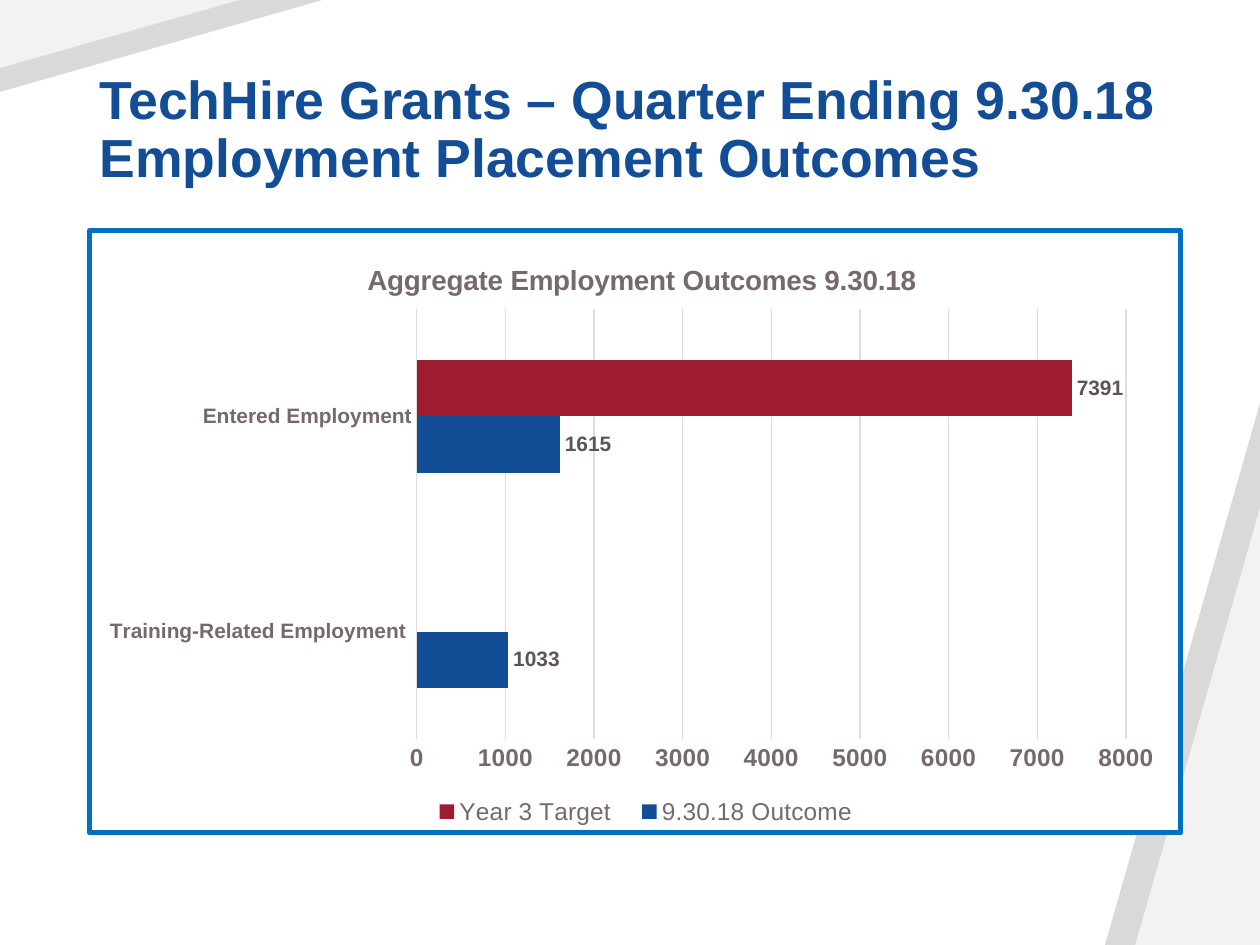
from lxml.etree import fromstring
from pptx import Presentation
from pptx.chart.data import CategoryChartData
from pptx.dml.color import RGBColor
from pptx.enum.chart import XL_CHART_TYPE, XL_LABEL_POSITION, XL_LEGEND_POSITION, XL_TICK_MARK
from pptx.enum.text import MSO_ANCHOR, MSO_AUTO_SIZE, PP_ALIGN
from pptx.oxml.ns import nsdecls, qn
from pptx.util import Inches, Pt

WIDTH, HEIGHT = 10, 7.5
FONT = "Arial"
COLORS = {
    "blue": "124D95", "red": "9E1C30", "border": "0070C0", "white": "FFFFFF",
    "label": "5E5457", "axis": "76696C", "grid": "E0DCDD",
    "band": "D9D9D9", "corner": "F2F2F2",
}
TITLE = "TechHire Grants – Quarter Ending 9.30.18\vEmployment Placement Outcomes"
CHART_TITLE = "Aggregate Employment Outcomes 9.30.18"
CATEGORIES = ["Training-Related Employment ", "Entered Employment"]
SERIES = [
    ("9.30.18 Outcome", [1033, 1615], "blue"),
    ("Year 3 Target", [None, 7391], "red"),
]
CORNERS = [
    ((WIDTH, HEIGHT), -1.23, -4.3, "band"),
    ((WIDTH, HEIGHT), -0.99, -3.47, "corner"),
    ((0, 0), 2.56, 0.73, "band"),
    ((0, 0), 1.9, 0.54, "corner"),
]
LEFT, CONTENT_WIDTH = 0.69, 8.7
TITLE_BOX = (LEFT, 0.4, CONTENT_WIDTH, 1.15)
CHART_BOX = (LEFT, 1.81, CONTENT_WIDTH, 4.82)
PLOT_SHARE = {"x": 0.3, "y": 0.13, "w": 0.65, "h": 0.715}
TITLE_SHARE = {"x": 0.25, "y": 0.045}
LEGEND_SHARE = {"x": 0.3, "y": 0.935, "w": 0.42, "h": 0.06}
FORMATS = {
    "title": {"size": Pt(30.6), "bold": True, "color": "blue"},
    "chart title": {"size": Pt(16), "bold": True, "color": "axis"},
    "category": {"size": Pt(12), "bold": True, "color": "axis"},
    "value": {"size": Pt(14), "bold": True, "color": "axis"},
    "legend": {"size": Pt(14), "bold": False, "color": "axis"},
    "label": {"size": Pt(12), "bold": True, "color": "label"},
}


def rgb(name):
    return RGBColor.from_string(COLORS[name])


def style(font, kind):
    font.name = FONT
    for key, value in FORMATS[kind].items():
        if key == "color":
            font.color.rgb = rgb(value)
        else:
            setattr(font, key, value)


def draw_line(line, color, width):
    line.color.rgb = rgb(color)
    line.width = Pt(width)


def set_layout(element, index, shares, inner=False):
    for old in element.findall(qn("c:layout")):
        element.remove(old)
    target = '<c:layoutTarget val="inner"/>' if inner else ""
    modes = "".join(f'<c:{key}Mode val="edge"/>' for key in "xy")
    values = "".join(f'<c:{key} val="{share}"/>' for key, share in shares.items())
    element.insert(index, fromstring(
        f'<c:layout {nsdecls("c")}><c:manualLayout>{target}{modes}{values}'
        '</c:manualLayout></c:layout>'))


def add_corner(page, corner, across, down, color):
    x, y = corner
    builder = page.shapes.build_freeform(Inches(x), Inches(y))
    builder.add_line_segments(
        [(Inches(x + across), Inches(y)), (Inches(x), Inches(y + down))])
    shape = builder.convert_to_shape()
    shape.shadow.inherit = False
    shape.fill.solid()
    shape.fill.fore_color.rgb = rgb(color)
    shape.line.fill.background()


def add_title(page):
    title = page.shapes.title
    title.left, title.top, title.width, title.height = map(Inches, TITLE_BOX)
    frame = title.text_frame
    frame.text = TITLE
    frame.word_wrap = True
    frame.auto_size = MSO_AUTO_SIZE.NONE
    frame.vertical_anchor = MSO_ANCHOR.BOTTOM
    para = frame.paragraphs[0]
    para.alignment = PP_ALIGN.LEFT
    para.line_spacing = 0.9
    for span in para.runs:
        style(span.font, "title")


def add_outcomes(page):
    data = CategoryChartData()
    data.categories = CATEGORIES
    for name, values, _ in SERIES:
        data.add_series(name, values)
    chart = page.shapes.add_chart(
        XL_CHART_TYPE.BAR_CLUSTERED, *map(Inches, CHART_BOX), data).chart
    chart.font.name = FONT
    chart.font.size = Pt(10)

    heading = chart.chart_title.text_frame
    heading.text = CHART_TITLE
    style(heading.paragraphs[0].runs[0].font, "chart title")
    chart.has_legend = True
    chart.legend.position = XL_LEGEND_POSITION.BOTTOM
    chart.legend.include_in_layout = False
    style(chart.legend.font, "legend")

    for axis, kind in ((chart.category_axis, "category"), (chart.value_axis, "value")):
        axis.major_tick_mark = axis.minor_tick_mark = XL_TICK_MARK.NONE
        style(axis.tick_labels.font, kind)
    draw_line(chart.category_axis.format.line, "grid", 0.75)
    axis = chart.value_axis
    axis.minimum_scale, axis.maximum_scale, axis.major_unit = 0, 8000, 1000
    axis.format.line.fill.background()
    draw_line(axis.major_gridlines.format.line, "grid", 0.75)

    plot = chart.plots[0]
    plot.gap_width, plot.overlap, plot.vary_by_categories = 182, 0, False
    for series, (_, _, color) in zip(plot.series, SERIES):
        series.format.fill.solid()
        series.format.fill.fore_color.rgb = rgb(color)
        labels = series.data_labels
        labels.show_value = True
        labels.position = XL_LABEL_POSITION.OUTSIDE_END
        style(labels.font, "label")

    space = chart.element
    body = space.find(qn("c:chart"))
    set_layout(body.find(qn("c:plotArea")), 0, PLOT_SHARE, inner=True)
    set_layout(body.find(qn("c:title")), 1, TITLE_SHARE)
    set_layout(body.find(qn("c:legend")), 1, LEGEND_SHARE)
    body.addnext(fromstring(
        f'<c:spPr {nsdecls("c", "a")}>'
        f'<a:solidFill><a:srgbClr val="{COLORS["white"]}"/></a:solidFill>'
        f'<a:ln w="{Pt(3)}"><a:solidFill><a:srgbClr val="{COLORS["border"]}"/>'
        '</a:solidFill><a:round/></a:ln></c:spPr>'))


def main():
    deck = Presentation()
    deck.slide_width, deck.slide_height = Inches(WIDTH), Inches(HEIGHT)
    page = deck.slides.add_slide(deck.slide_layouts[5])
    for corner in CORNERS:
        add_corner(page, *corner)
    add_title(page)
    add_outcomes(page)
    deck.save("out.pptx")


if __name__ == "__main__":
    main()
